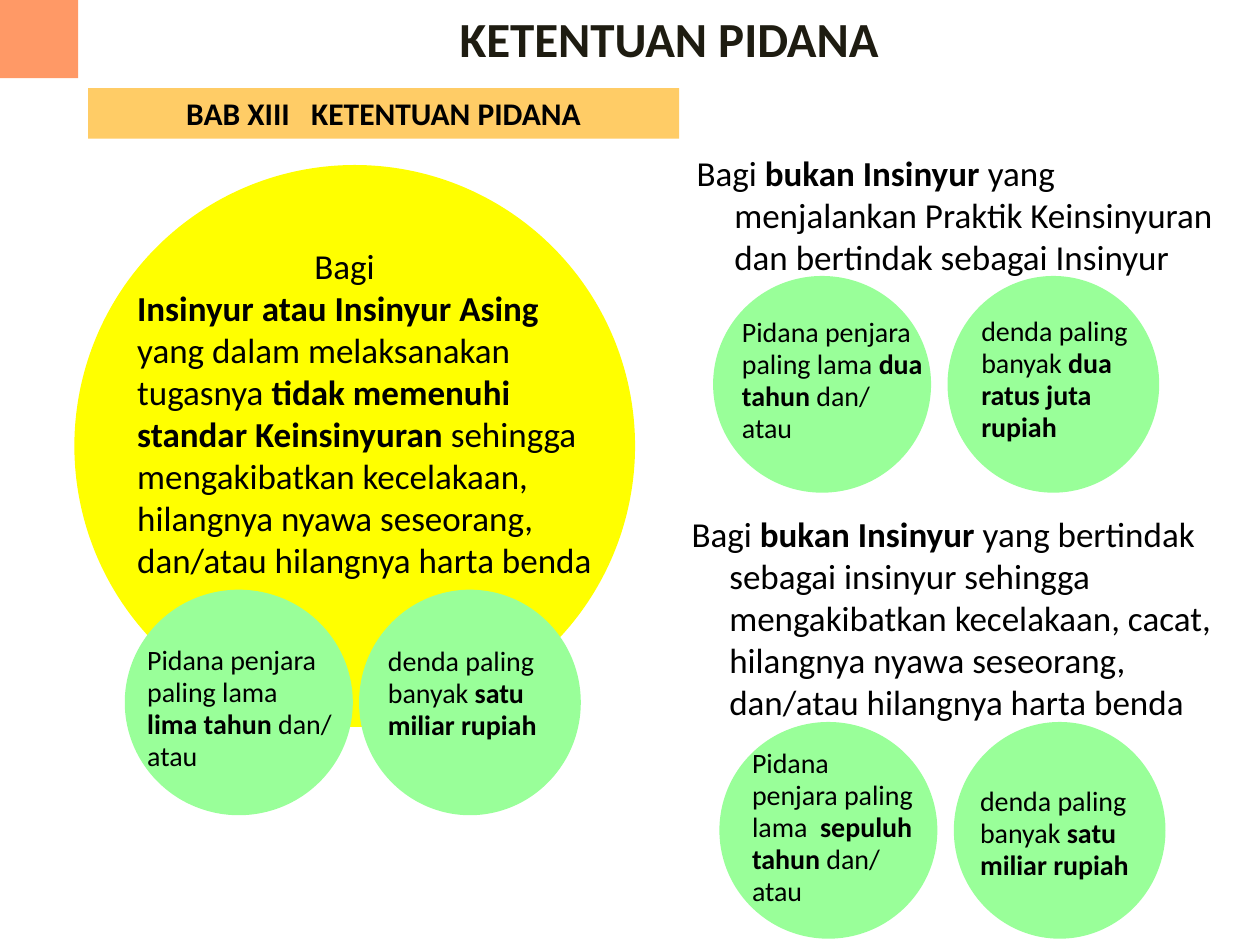
from dataclasses import dataclass

from pptx import Presentation
from pptx.dml.color import RGBColor
from pptx.enum.shapes import MSO_SHAPE as Shape
from pptx.enum.text import MSO_ANCHOR as Anchor, MSO_AUTO_SIZE as AutoSize, PP_ALIGN as Align
from pptx.util import Pt

EMU_PER_PX = 9144


@dataclass(frozen=True)
class Theme:
    """Hold the colours, font and type sizes of the slide."""
    font: str = "Calibri"
    ink: str = "000000"
    title_ink: str = "1E1C11"
    corner: str = "FF9966"
    banner: str = "FFCC66"
    offence: str = "FFFF00"
    penalty: str = "99FF99"
    title_size: int = 28
    banner_size: int = 18
    body_size: int = 20
    penalty_size: int = 16


THEME = Theme()


def px(*lengths):
    """Turn lengths in px into EMU."""
    return [length * EMU_PER_PX for length in lengths]


def inside(box, offset):
    """Place an offset box relative to the corner of its region."""
    return box[0] + offset[0], box[1] + offset[1], offset[2], offset[3]


def style_run(run, size, bold=False, color=THEME.ink):
    """Apply the theme font to a run."""
    run.font.name = THEME.font
    run.font.size = Pt(size)
    run.font.bold = bold
    run.font.color.rgb = RGBColor.from_string(color)


def write_marked(paragraph, text, size):
    """Write text whose ** marks switch bold on and off."""
    for index, part in enumerate(text.split("**")):
        if part:
            run = paragraph.add_run()
            run.text = part
            style_run(run, size, bold=index % 2 == 1)


def indent(paragraph, left, first=0):
    """Set the left and first-line indents in px."""
    properties = paragraph._p.get_or_add_pPr()
    for name, length in zip(("marL", "indent"), px(left, first)):
        properties.set(name, str(length))


def add_filled(shapes, kind, box, color):
    """Add a plain filled shape."""
    shape = shapes.add_shape(kind, *px(*box))
    shape.shadow.inherit = False
    shape.fill.solid()
    shape.fill.fore_color.rgb = RGBColor.from_string(color)
    shape.line.fill.background()
    return shape


def add_text(shapes, box, lines, size):
    """Add a wrapping text box and return its paragraphs."""
    text_frame = shapes.add_textbox(*px(*box)).text_frame
    text_frame.word_wrap = True
    text_frame.text = "\n" * (len(lines) - 1)
    for paragraph, line in zip(text_frame.paragraphs, lines):
        write_marked(paragraph, line, size)
    return text_frame.paragraphs


def add_heading(slide, box):
    """Place the corner square, the title and the chapter banner."""
    left, top, width, height = box
    add_filled(slide.shapes, Shape.RECTANGLE, (left, top, 62, 62), THEME.corner)
    banner = add_filled(slide.shapes, Shape.RECTANGLE, inside(box, (70, 70, 469, 40)), THEME.banner)
    title = slide.shapes.title
    title.left, title.top, title.width, title.height = px(left + 62, top, width - 62, 60)
    labels = (
        (title, "KETENTUAN PIDANA", THEME.title_size, THEME.title_ink),
        (banner, "BAB XIII   KETENTUAN PIDANA", THEME.banner_size, THEME.ink),
    )
    for shape, text, size, color in labels:
        text_frame = shape.text_frame
        text_frame.text = text
        text_frame.auto_size = AutoSize.NONE
        text_frame.vertical_anchor = Anchor.MIDDLE
        paragraph = text_frame.paragraphs[0]
        paragraph.alignment = Align.CENTER
        style_run(paragraph.runs[0], size, True, color)


def add_engineer_offence(slide, box):
    """Place the large circle and the rule for engineers."""
    add_filled(slide.shapes, Shape.OVAL, box, THEME.offence)
    opening, rule = add_text(slide.shapes, inside(box, (10, 58, 415, 279)), (
        "Bagi ",
        "**Insinyur atau Insinyur Asing **yang dalam melaksanakan tugasnya "
        "**tidak memenuhi standar Keinsinyuran **sehingga mengakibatkan kecelakaan, "
        "hilangnya nyawa seseorang, dan/atau hilangnya harta benda",
    ), THEME.body_size)
    opening.alignment = Align.CENTER
    indent(opening, 30, -30)
    indent(rule, 30)


def add_other_offence(slide, box, text):
    """Place a rule for people who are not engineers."""
    for paragraph in add_text(slide.shapes, box, (text,), THEME.body_size):
        indent(paragraph, 30, -30)


def add_penalties(slide, box, prison_width, prison, fine):
    """Place a grouped prison circle and fine circle with their texts."""
    width, height = box[2:]
    fine_width = prison_width - 5
    shapes = slide.shapes.add_group_shape().shapes
    for circle in ((width - fine_width, 0, fine_width, height), (0, 0, prison_width, height)):
        add_filled(shapes, Shape.OVAL, inside(box, circle), THEME.penalty)
    for offset, *lines in (prison, fine):
        for paragraph in add_text(shapes, inside(box, offset), lines, THEME.penalty_size):
            paragraph.line_spacing = 0.95


def main():
    """Build the slide and save it."""
    presentation = Presentation()
    presentation.slide_width, presentation.slide_height = px(1000, 750)
    slide = presentation.slides.add_slide(presentation.slide_layouts[5])
    add_engineer_offence(slide, (59, 131, 445, 446))
    add_heading(slide, (0, 0, 1000, 110))
    add_other_offence(
        slide, (543, 115, 453, 128),
        "Bagi **bukan Insinyur **yang menjalankan Praktik Keinsinyuran "
        "dan bertindak sebagai Insinyur")
    add_other_offence(
        slide, (539, 402, 453, 178),
        "Bagi **bukan Insinyur** yang bertindak sebagai insinyur sehingga mengakibatkan "
        "kecelakaan, cacat, hilangnya nyawa seseorang, dan/atau hilangnya harta benda")
    billion_fine = "denda paling banyak **satu miliar rupiah**"
    add_penalties(
        slide, (99, 468, 362, 179), 181,
        ((8, 39, 173, 112), "Pidana penjara paling lama ** lima tahun **dan/ atau"),
        ((199, 40, 171, 87), billion_fine))
    add_penalties(
        slide, (566, 219, 354, 172), 173,
        ((13, 28, 165, 112), "Pidana penjara paling lama **dua tahun **dan/ atau"),
        ((203, 27, 156, 112), "denda paling banyak **dua ratus juta rupiah**"))
    add_penalties(
        slide, (571, 573, 354, 172), 173,
        ((16, 16, 152, 138), "Pidana penjara paling lama  **sepuluh tahun **dan/", "atau"),
        ((197, 46, 171, 87), billion_fine))
    presentation.save("out.pptx")


if __name__ == "__main__":
    main()
